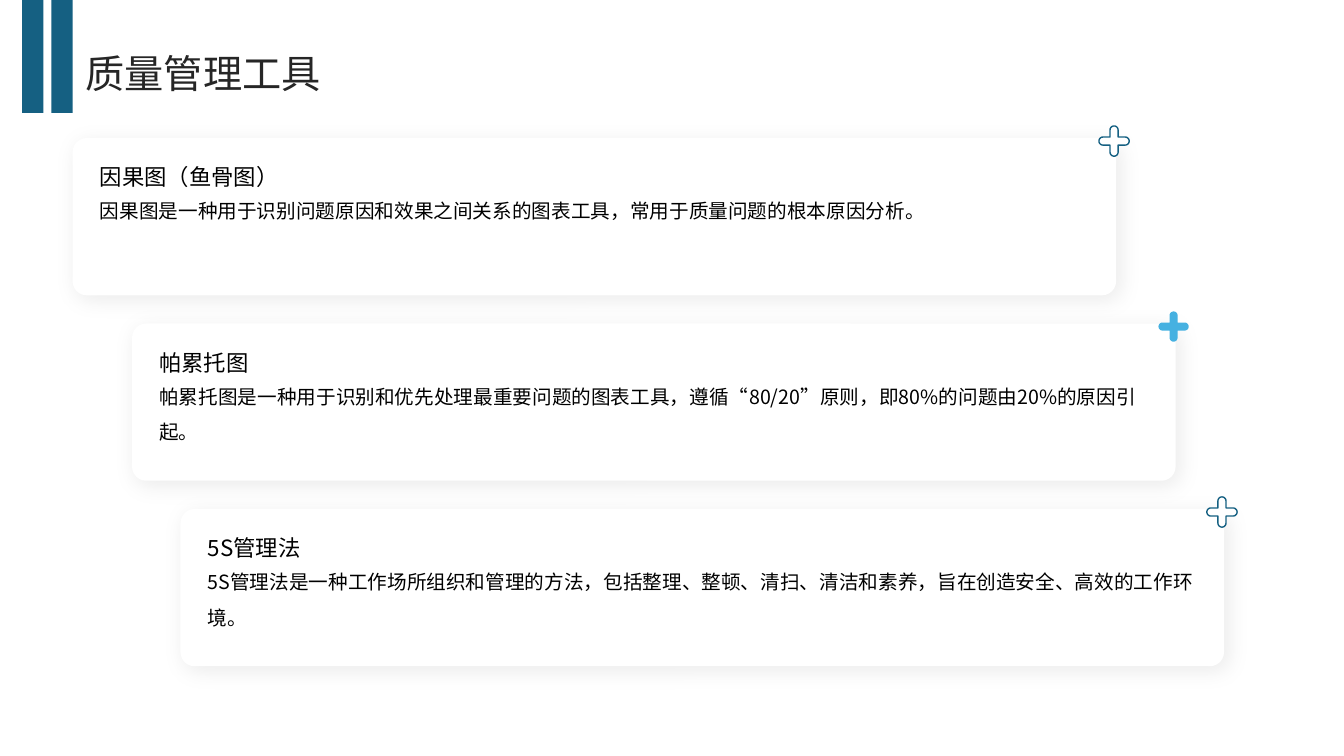
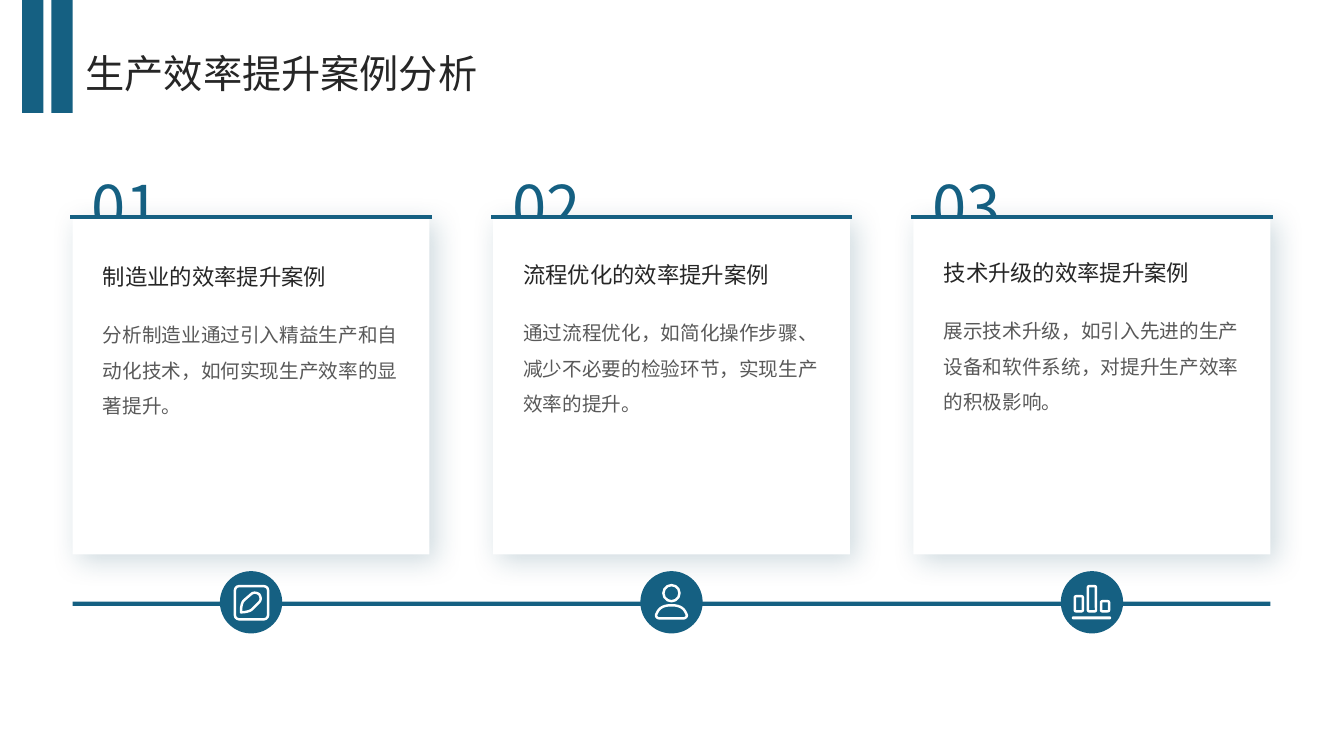
from dataclasses import dataclass
from math import cos, pi, sin

from lxml.etree import SubElement
from pptx import Presentation
from pptx.dml.color import RGBColor
from pptx.enum.shapes import MSO_CONNECTOR, MSO_SHAPE
from pptx.enum.text import MSO_ANCHOR, MSO_AUTO_SIZE, PP_ALIGN
from pptx.oxml.ns import qn
from pptx.util import Inches, Pt

TOOLS = [
    (0.72, "因果图（鱼骨图）",
     "因果图是一种用于识别问题原因和效果之间关系的图表工具，常用于质量问题的根本原因分析。"),
    (1.31, "帕累托图",
     "帕累托图是一种用于识别和优先处理最重要问题的图表工具，遵循“80/20”原则，即80%的问题由20%的原因引起。"),
    (1.79, "5S管理法",
     "5S管理法是一种工作场所组织和管理的方法，包括整理、整顿、清扫、清洁和素养，旨在创造安全、高效的工作环境。"),
]
CASES = [
    ("01", "制造业的效率提升案例",
     "分析制造业通过引入精益生产和自动化技术，如何实现生产效率的显著提升。"),
    ("02", "流程优化的效率提升案例",
     "通过流程优化，如简化操作步骤、减少不必要的检验环节，实现生产效率的提升。"),
    ("03", "技术升级的效率提升案例",
     "展示技术升级，如引入先进的生产设备和软件系统，对提升生产效率的积极影响。"),
]
PEN = [(-0.1, 0.1), (-0.1, 0.04, -0.09, 0, -0.07, -0.02), (0, -0.08),
       (0.02, -0.1, 0.05, -0.1, 0.08, -0.08), (0.1, -0.05, 0.1, -0.02, 0.08, 0),
       (0.01, 0.07), (-0.01, 0.09, -0.06, 0.1, -0.1, 0.1)]
BODY = [(0, 0.03), (0.1, 0.03, 0.13, 0.07, 0.15, 0.12), (0.16, 0.14, 0.14, 0.16, 0.12, 0.16),
        (-0.12, 0.16), (-0.14, 0.16, -0.16, 0.14, -0.15, 0.12), (-0.13, 0.07, -0.1, 0.03, 0, 0.03)]
BARS = [(-0.17, -0.06), (-0.04, -0.16), (0.09, -0.01)]


@dataclass(frozen=True)
class Theme:
    font: str = "Noto Sans CJK SC"
    main: str = "156082"
    sky: str = "46B1E1"
    white: str = "FFFFFF"
    black: str = "000000"
    dark: str = "262626"
    grey: str = "595959"
    deep: str = "104862"
    title: int = 28
    number: int = 44
    head: int = 16
    body: int = 14
    stroke: float = 1.75


T = Theme()


def rgb(color):
    return RGBColor.from_string(color)


def paint(shape, fill=None, line=None, width=1):
    shape.shadow.inherit = False
    if fill:
        shape.fill.solid()
        shape.fill.fore_color.rgb = rgb(fill)
    else:
        shape.fill.background()
    if line:
        shape.line.color.rgb = rgb(line)
        shape.line.width = Pt(width)
    else:
        shape.line.fill.background()
    return shape


def draw(slide, kind, x, y, w, h, fill=None, line=None, width=1, bend=None):
    shape = slide.shapes.add_shape(kind, Inches(x), Inches(y), Inches(w), Inches(h))
    if bend is not None:
        shape.adjustments[0] = bend
    return paint(shape, fill, line, width)


def outline(slide, x, y, dots, fill=None, line=None, width=1):
    spots = [(Inches(x + a), Inches(y + b)) for a, b in dots]
    form = slide.shapes.build_freeform(*spots[0])
    form.add_line_segments(spots[1:], close=True)
    return paint(form.convert_to_shape(), fill, line, width)


def cast(shape, color, alpha, blur, dist):
    effects = shape.element.spPr.find(qn("a:effectLst"))
    outer = SubElement(effects, qn("a:outerShdw"), blurRad=str(Pt(blur)), dist=str(Pt(dist)),
                       dir="2700000", algn="tl", rotWithShape="0")
    tint = SubElement(outer, qn("a:srgbClr"), val=color)
    SubElement(tint, qn("a:alpha"), val=str(alpha * 1000))


def style(frame, text, size, color, gap=1.0, align=PP_ALIGN.LEFT, anchor=MSO_ANCHOR.TOP):
    frame.word_wrap = True
    frame.auto_size = MSO_AUTO_SIZE.NONE
    frame.vertical_anchor = anchor
    frame.margin_left = frame.margin_right = frame.margin_top = frame.margin_bottom = 0
    frame.text = text
    line = frame.paragraphs[0]
    line.alignment = align
    line.line_spacing = gap
    font = line.runs[0].font
    font.size = Pt(size)
    font.color.rgb = rgb(color)
    font.name = T.font
    SubElement(line.runs[0]._r.get_or_add_rPr(), qn("a:ea"), typeface=T.font)


def write(slide, x, y, w, h, *args, **opts):
    box = slide.shapes.add_textbox(Inches(x), Inches(y), Inches(w), Inches(h))
    style(box.text_frame, *args, **opts)


def page(deck, text):
    slide = deck.slides.add_slide(deck.slide_layouts.get_by_name("Title Only"))
    title = slide.shapes.title
    title.left, title.top = Inches(0.85), Inches(0.44)
    title.width, title.height = Inches(11.67), Inches(0.51)
    style(title.text_frame, text, T.title, T.dark, 1.1, anchor=MSO_ANCHOR.MIDDLE)
    for x in (0.22, 0.51):
        draw(slide, MSO_SHAPE.RECTANGLE, x, 0, 0.21, 1.12, T.main)
    return slide


def trace(steps, count=8):
    dots = [steps[0]]
    for step in steps[1:]:
        if len(step) == 2:
            dots.append(step)
            continue
        knots = [dots[-1], step[:2], step[2:4], step[4:]]
        for n in range(1, count + 1):
            t = n / count
            parts = ((1 - t) ** 3, 3 * t * (1 - t) ** 2, 3 * t * t * (1 - t), t ** 3)
            dots.append(tuple(sum(p * k[i] for p, k in zip(parts, knots)) for i in (0, 1)))
    return dots


def cross(reach=0.15, half=0.04):
    turns = [pi * n / 12 for n in range(-6, 7)]
    arm = [(reach - half + half * cos(t), half * sin(t)) for t in turns] + [(half, half)]
    dots = []
    for _ in range(4):
        dots += arm
        arm = [(-y, x) for x, y in arm]
    return dots


def pen(slide, x, y):
    draw(slide, MSO_SHAPE.ROUNDED_RECTANGLE, x - 0.16, y - 0.16, 0.33, 0.33,
         line=T.white, width=T.stroke, bend=0.13)
    outline(slide, x, y, trace(PEN), line=T.white, width=T.stroke)


def person(slide, x, y):
    draw(slide, MSO_SHAPE.OVAL, x - 0.08, y - 0.17, 0.16, 0.16, line=T.white, width=T.stroke)
    outline(slide, x, y, trace(BODY), line=T.white, width=T.stroke)


def chart(slide, x, y):
    for left, top in BARS:
        draw(slide, MSO_SHAPE.ROUNDED_RECTANGLE, x + left, y + top, 0.08, 0.09 - top,
             line=T.white, width=T.stroke, bend=0.15)
    draw(slide, MSO_SHAPE.ROUNDED_RECTANGLE, x - 0.2, y + 0.14, 0.39, 0.03, T.white, bend=0.5)


def tools(deck):
    slide = page(deck, "质量管理工具")
    wide = 10.35
    for n, (x, head, body) in enumerate(TOOLS):
        y = 1.37 + 1.84 * n
        card = draw(slide, MSO_SHAPE.ROUNDED_RECTANGLE, x, y, wide, 1.56, T.white, bend=0.09)
        cast(card, T.black, 8, 16, 3)
        write(slide, x + 0.27, y + 0.12, 9.81, 0.43, head, T.head, T.black, 1.5)
        write(slide, x + 0.27, y + 0.49, 9.81, 0.99, body, T.body, T.black, 1.5)
        fill, line = (T.sky, None) if n % 2 else (T.white, T.main)
        outline(slide, x + wide - 0.02, y + 0.03, cross(), fill, line)


def cases(deck):
    slide = page(deck, "生产效率提升案例分析")
    left, top, wide, total = 0.72, 2.15, 3.54, 11.88
    step = (total - wide) / (len(CASES) - 1)
    draw(slide, MSO_SHAPE.RECTANGLE, left, 5.97, total, 0.04, T.main)
    for n, ((mark, head, body), icon) in enumerate(zip(CASES, (pen, person, chart))):
        x = left + step * n
        y = 2.42 - 0.02 * n
        write(slide, x, 1.68, 1.06, 0.61, mark, T.number, T.main, align=PP_ALIGN.CENTER)
        card = draw(slide, MSO_SHAPE.RECTANGLE, x, top, wide, 3.35, T.white)
        cast(card, T.deep, 20, 20, 6)
        edge = slide.shapes.add_connector(MSO_CONNECTOR.STRAIGHT, Inches(x), Inches(top),
                                          Inches(x + wide), Inches(top))
        edge.line.color.rgb = rgb(T.main)
        edge.line.width = Pt(3)
        edge.element.spPr.find(qn("a:ln")).set("cap", "sq")
        SubElement(edge.element.spPr, qn("a:effectLst"))
        write(slide, x + 0.3, y, 2.95, 0.59, head, T.head, T.dark, 1.2,
              anchor=MSO_ANCHOR.MIDDLE)
        write(slide, x + 0.3, y + 0.67, 2.95, 2.11, body, T.body, T.grey, 1.5)
        mid, size = x + wide / 2, 0.59
        draw(slide, MSO_SHAPE.OVAL, mid - size / 2, 5.68, size, size, T.main, T.main, 2)
        icon(slide, mid, 5.68 + size / 2)


def main():
    deck = Presentation()
    deck.slide_width, deck.slide_height = Inches(13.33), Inches(7.5)
    tools(deck)
    cases(deck)
    deck.save("out.pptx")


if __name__ == "__main__":
    main()
